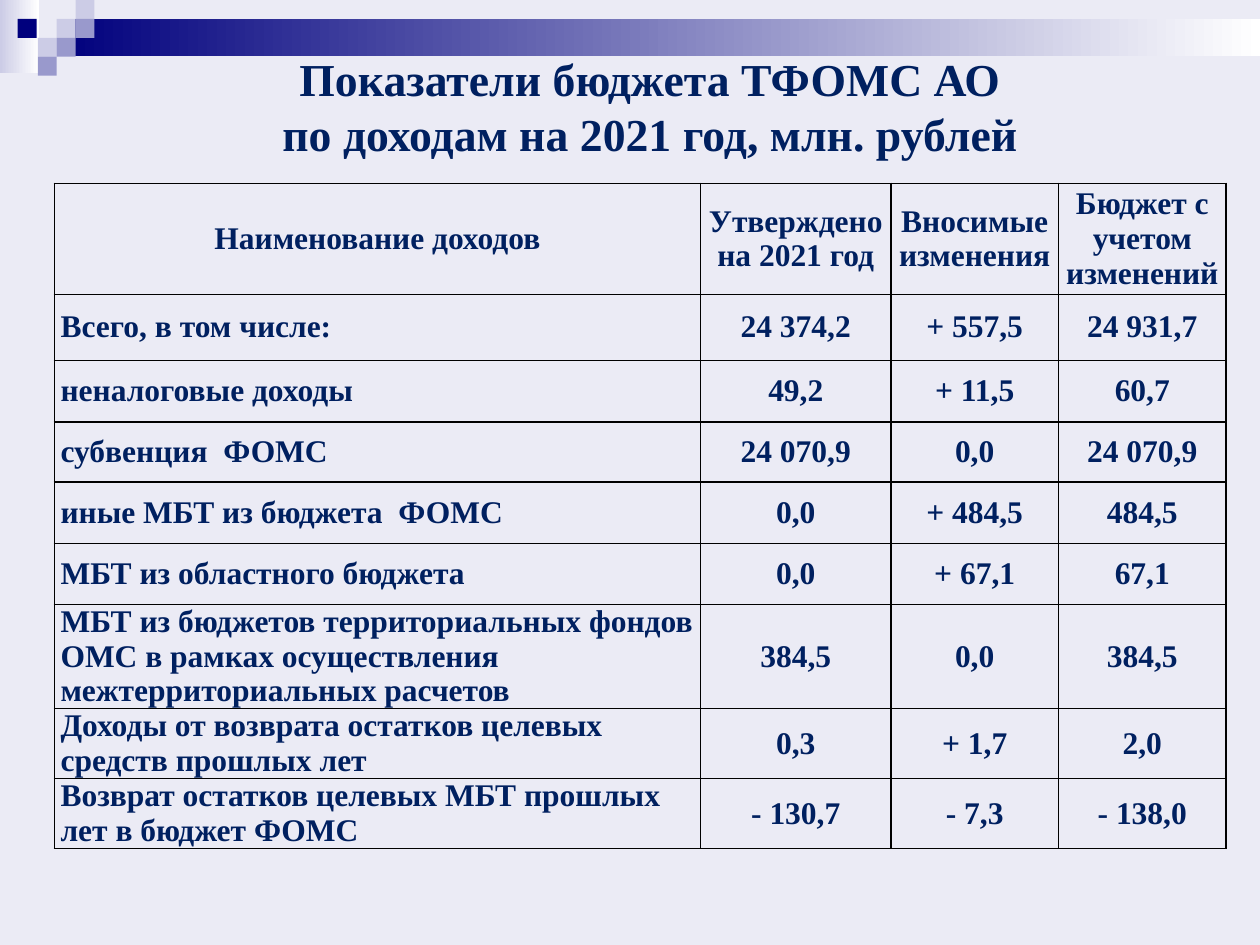
from dataclasses import dataclass

from lxml.etree import SubElement
from pptx import Presentation
from pptx.dml.color import RGBColor
from pptx.enum.shapes import MSO_SHAPE
from pptx.enum.text import MSO_ANCHOR, MSO_AUTO_SIZE, PP_ALIGN
from pptx.oxml.ns import qn
from pptx.util import Pt

NAVY, DEEP_BLUE, LILAC, LAVENDER = "002060", "00007D", "9999CC", "CCCCE6"
WHITE, BLACK, PALE = "FFFFFF", "000000", "EBEBF5"
SERIF = "Times New Roman"
SQUARE = 10.8


@dataclass
class Band:
    left: float
    top: float
    width: float
    height: float
    start: str


@dataclass
class Square:
    left: float
    row: int
    color: str


@dataclass
class Income:
    name: str
    approved: str
    change: str
    total: str
    height: float


BANDS = [
    Band(0, 0, 22.3, 41.8, LAVENDER),
    Band(32.4, SQUARE, 687.6, 21.4, DEEP_BLUE),
]
SQUARES = [
    Square(32.4, 1, LAVENDER),
    Square(43.2, 0, LAVENDER),
    Square(43.2, 1, LILAC),
    Square(21.6, 2, LAVENDER),
    Square(10.1, 1, DEEP_BLUE),
    Square(32.4, 2, LILAC),
    Square(21.6, 3, LILAC),
]
COLUMN_WIDTHS = [369.4, 108.7, 95.8, 95.8]
INCOMES = [
    Income("Наименование доходов", "Утверждено\nна 2021 год", "Вносимые изменения",
           "Бюджет с учетом изменений", 63.4),
    Income("Всего, в том числе:", "24 374,2", "+ 557,5", "24 931,7", 37.8),
    Income("неналоговые доходы", "49,2", "+ 11,5", "60,7", 35.3),
    Income("субвенция  ФОМС", "24 070,9", "0,0", "24 070,9", 34.3),
    Income("иные МБТ из бюджета  ФОМС", "0,0", "+ 484,5", "484,5", 34.9),
    Income("МБТ из областного бюджета", "0,0", "+ 67,1", "67,1", 34.9),
    Income("МБТ из бюджетов территориальных фондов ОМС в рамках осуществления "
           "межтерриториальных расчетов", "384,5", "0,0", "384,5", 59.5),
    Income("Доходы от возврата остатков целевых средств прошлых лет",
           "0,3", "+ 1,7", "2,0", 40),
    Income("Возврат остатков целевых МБТ прошлых лет в бюджет ФОМС",
           "- 130,7", "- 7,3", "- 138,0", 40),
]


def rgb(color: str) -> RGBColor:
    return RGBColor.from_string(color)


def add_box(slide, left: float, top: float, width: float, height: float):
    box = slide.shapes.add_shape(
        MSO_SHAPE.RECTANGLE, Pt(left), Pt(top), Pt(width), Pt(height))
    box.shadow.inherit = False
    box.line.fill.background()
    return box


def draw_band(slide, band: Band) -> None:
    fill = add_box(slide, band.left, band.top, band.width, band.height).fill
    fill.gradient()
    fill.gradient_angle = 0
    for stop, color, position in zip(fill.gradient_stops, (band.start, WHITE), (0, 1)):
        stop.color.rgb = rgb(color)
        stop.position = position


def draw_square(slide, square: Square) -> None:
    fill = add_box(slide, square.left, square.row * SQUARE, SQUARE, SQUARE).fill
    fill.solid()
    fill.fore_color.rgb = rgb(square.color)


def format_text(frame, size: float, leading: float, align: PP_ALIGN) -> None:
    for paragraph in frame.paragraphs:
        paragraph.alignment = align
        paragraph.line_spacing = Pt(leading)
        paragraph.space_before = paragraph.space_after = Pt(0)
        font = paragraph.font
        font.name, font.size, font.bold = SERIF, Pt(size), True
        font.color.rgb = rgb(NAVY)


def add_borders(cell) -> None:
    properties = cell._tc.get_or_add_tcPr()
    for side in ("a:lnL", "a:lnR", "a:lnT", "a:lnB"):
        line = SubElement(properties, qn(side), w=str(Pt(1)))
        SubElement(SubElement(line, qn("a:solidFill")), qn("a:srgbClr"), val=BLACK)


def fill_cell(cell, text: str, align: PP_ALIGN) -> None:
    cell.text = text
    cell.vertical_anchor = MSO_ANCHOR.MIDDLE
    cell.margin_left = cell.margin_right = Pt(3.6)
    cell.margin_top = cell.margin_bottom = Pt(0)
    add_borders(cell)
    cell.fill.background()
    format_text(cell.text_frame, 18, 19.8, align)


def draw_table(slide) -> None:
    table = slide.shapes.add_table(
        len(INCOMES), len(COLUMN_WIDTHS), Pt(31), Pt(104.8),
        Pt(sum(COLUMN_WIDTHS)), Pt(sum(income.height for income in INCOMES))).table
    table.first_row = table.horz_banding = False
    for column, width in zip(table.columns, COLUMN_WIDTHS):
        column.width = Pt(width)
    for row, income in enumerate(INCOMES):
        table.rows[row].height = Pt(income.height)
        values = (income.name, income.approved, income.change, income.total)
        for column, value in enumerate(values):
            is_name = row > 0 and column == 0
            fill_cell(table.cell(row, column), value,
                      PP_ALIGN.LEFT if is_name else PP_ALIGN.CENTER)


def draw_title(slide) -> None:
    title = slide.shapes.title
    title.left, title.top, title.width, title.height = Pt(54), Pt(37.4), Pt(635), Pt(45.4)
    frame = title.text_frame
    frame.text = "Показатели бюджета ТФОМС АО\vпо доходам на 2021 год, млн. рублей"
    frame.word_wrap = True
    frame.auto_size = MSO_AUTO_SIZE.NONE
    frame.vertical_anchor = MSO_ANCHOR.MIDDLE
    format_text(frame, 26.1, 31.4, PP_ALIGN.CENTER)


def main() -> None:
    deck = Presentation()
    deck.slide_width, deck.slide_height = Pt(720), Pt(540)
    slide = deck.slides.add_slide(deck.slide_layouts[5])
    slide.background.fill.solid()
    slide.background.fill.fore_color.rgb = rgb(PALE)

    # Corner ornament
    for band in BANDS:
        draw_band(slide, band)
    for square in SQUARES:
        draw_square(slide, square)

    # Title and budget table
    draw_title(slide)
    draw_table(slide)
    deck.save("out.pptx")


if __name__ == "__main__":
    main()
